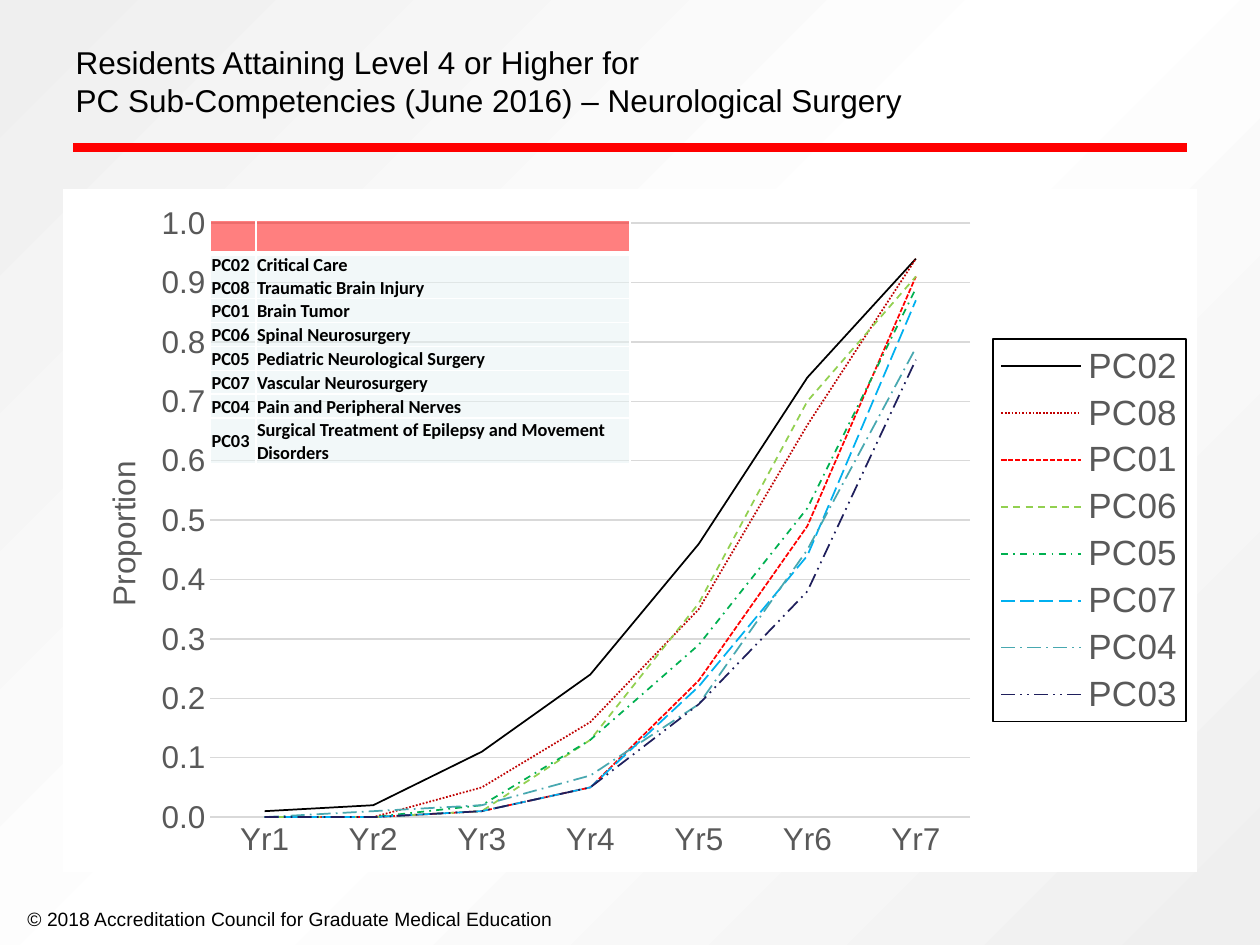
from copy import deepcopy
from lxml import etree
from pptx import Presentation
from pptx.chart.data import CategoryChartData
from pptx.dml.color import RGBColor
from pptx.enum.chart import XL_CHART_TYPE, XL_LEGEND_POSITION, XL_TICK_MARK
from pptx.enum.dml import MSO_LINE
from pptx.enum.shapes import MSO_CONNECTOR
from pptx.enum.text import MSO_ANCHOR, PP_ALIGN
from pptx.oxml import parse_xml
from pptx.oxml.ns import nsdecls, qn
from pptx.util import Inches, Pt

LINE = XL_CHART_TYPE.LINE
RIGHT = XL_LEGEND_POSITION.RIGHT
NONE = XL_TICK_MARK.NONE
MIDDLE = MSO_ANCHOR.MIDDLE
LEFT = PP_ALIGN.LEFT
STRAIGHT = MSO_CONNECTOR.STRAIGHT

BLACK = RGBColor(0x00, 0x00, 0x00)
WHITE = RGBColor(0xFF, 0xFF, 0xFF)
RED = RGBColor(0xFF, 0x00, 0x00)
GRAY = RGBColor(0x59, 0x59, 0x59)
GRID = RGBColor(0xD9, 0xD9, 0xD9)
EDGE = RGBColor(0xEF, 0xEF, 0xEF)
PALE = RGBColor(0xE7, 0xF3, 0xF4)
MAROON = RGBColor(0xC0, 0x00, 0x00)
LIME = RGBColor(0x92, 0xD0, 0x50)
GREEN = RGBColor(0x00, 0xB0, 0x50)
BLUE = RGBColor(0x00, 0xB0, 0xF0)
TEAL = RGBColor(0x48, 0xA8, 0xB0)
NAVY = RGBColor(0x1F, 0x1F, 0x5C)

SERIES = [
    ("PC02", BLACK, MSO_LINE.SOLID, (0.01, 0.02, 0.11, 0.24, 0.46, 0.74, 0.94)),
    ("PC08", MAROON, MSO_LINE.ROUND_DOT, (0, 0, 0.05, 0.16, 0.35, 0.66, 0.94)),
    ("PC01", RED, MSO_LINE.SQUARE_DOT, (0, 0, 0.01, 0.05, 0.23, 0.49, 0.91)),
    ("PC06", LIME, MSO_LINE.DASH, (0, 0, 0.01, 0.13, 0.36, 0.7, 0.91)),
    ("PC05", GREEN, MSO_LINE.DASH_DOT, (0, 0, 0.02, 0.13, 0.29, 0.52, 0.89)),
    ("PC07", BLUE, MSO_LINE.LONG_DASH, (0, 0, 0.01, 0.05, 0.22, 0.44, 0.87)),
    ("PC04", TEAL, MSO_LINE.LONG_DASH_DOT, (0, 0.01, 0.02, 0.07, 0.19, 0.45, 0.79)),
    ("PC03", NAVY, "lgDashDotDot", (0, 0, 0.01, 0.05, 0.19, 0.38, 0.77)),
]
ROWS = [
    (0.26, [], []),
    (0.36, ["PC02", "PC08"], ["Critical Care", "Traumatic Brain Injury"]),
    (0.19, ["PC01"], ["Brain Tumor"]),
    (0.19, ["PC06"], ["Spinal Neurosurgery"]),
    (0.19, ["PC05"], ["Pediatric Neurological Surgery"]),
    (0.19, ["PC07"], ["Vascular Neurosurgery"]),
    (0.19, ["PC04"], ["Pain and Peripheral Nerves"]),
    (0.36, ["PC03"], ["Surgical Treatment of Epilepsy and Movement Disorders"]),
]


def style(font, size, color, name="Arial"):
    font.size = Pt(size)
    font.name = name
    font.color.rgb = color


def place(node, index, **box):
    for old in node.findall(qn("c:layout")):
        node.remove(old)
    layout = etree.Element(qn("c:layout"))
    manual = etree.SubElement(layout, qn("c:manualLayout"))
    if index == 0:
        etree.SubElement(manual, qn("c:layoutTarget")).set("val", "inner")
    for key in "xy":
        etree.SubElement(manual, qn(f"c:{key}Mode")).set("val", "edge")
    for key, value in box.items():
        etree.SubElement(manual, qn(f"c:{key}")).set("val", str(value))
    node.insert(index, layout)


prs = Presentation()
prs.slide_width, prs.slide_height = Inches(10), Inches(7.5)
slide = prs.slides.add_slide(prs.slide_layouts[5])
shapes = slide.shapes

back = slide.background.fill
back.gradient()
back.gradient_angle = 315
first, last = back.gradient_stops
for stop, color in ((first, WHITE), (last, EDGE)):
    stop.color.rgb = color
stops = slide.background._cSld.find(".//" + qn("a:gsLst"))
stops.insert(1, deepcopy(stops[0]))
stops[1].set("pos", "50000")
first.color.rgb = EDGE

title = shapes.title
title.left, title.top = Inches(0.5), Inches(0.02)
title.width, title.height = Inches(9), Inches(1.25)
title.text_frame.vertical_anchor = MIDDLE
para = title.text_frame.paragraphs[0]
para.alignment = LEFT
for i, text in enumerate(("Residents Attaining Level 4 or Higher for",
                          "PC Sub-Competencies (June 2016) – Neurological Surgery")):
    if i:
        para.add_line_break()
    run = para.add_run()
    run.text = text
    style(run.font, 18, BLACK)

rule = shapes.add_connector(STRAIGHT, Inches(0.58), Inches(1.17), Inches(9.42), Inches(1.17))
rule.line.color.rgb = RED
rule.line.width = Pt(5)
etree.SubElement(rule._element.spPr, qn("a:effectLst"))

credit = shapes.add_textbox(Inches(0.12), Inches(7.15), Inches(4.4), Inches(0.29))
run = credit.text_frame.paragraphs[0].add_run()
run.text = "© 2018 Accreditation Council for Graduate Medical Education"
style(run.font, 11, BLACK)

data = CategoryChartData(number_format="0.00")
data.categories = [f"Yr{n}" for n in range(1, 8)]
for name, color, dash, values in SERIES:
    data.add_series(name, values)
chart = shapes.add_chart(LINE, Inches(0.5), Inches(1.5), Inches(9), Inches(5.42), data).chart
style(chart.font, 10, BLACK)
chart.has_title = False
chart._chartSpace.find(qn("c:txPr")).addprevious(parse_xml(
    f'<c:spPr {nsdecls("c", "a")}><a:solidFill><a:srgbClr val="{WHITE}"/></a:solidFill>'
    '<a:ln><a:noFill/></a:ln></c:spPr>'))
plot = chart.plots[0]
plot.vary_by_categories = False
for series, (name, color, dash, values) in zip(plot.series, SERIES):
    series.smooth = False
    line = series.format.line
    line.color.rgb = color
    line.width = Pt(1)
    if dash == "lgDashDotDot":
        ln = series._element.spPr.find(qn("a:ln"))
        etree.SubElement(ln, qn("a:prstDash")).set("val", dash)
    else:
        line.dash_style = dash

years, share = chart.category_axis, chart.value_axis
for axis in (years, share):
    axis.major_tick_mark = axis.minor_tick_mark = NONE
    style(axis.tick_labels.font, 18, GRAY)
share.minimum_scale, share.maximum_scale, share.major_unit = 0, 1, 0.1
share.tick_labels.number_format = "#,##0.0"
share.tick_labels.number_format_is_linked = False
share.format.line.fill.background()
for line in (years.format.line, share.major_gridlines.format.line):
    line.color.rgb = GRID
    line.width = Pt(0.75)
run = share.axis_title.text_frame.paragraphs[0].add_run()
run.text = "Proportion"
style(run.font, 18, GRAY)
run.font.bold = False

chart.has_legend = True
legend = chart.legend
legend.position = RIGHT
legend.include_in_layout = False
style(legend.font, 20, GRAY)
legend._element.find(qn("c:txPr")).addprevious(parse_xml(
    f'<c:spPr {nsdecls("c", "a")}><a:ln w="12700"><a:solidFill>'
    f'<a:srgbClr val="{BLACK}"/></a:solidFill></a:ln></c:spPr>'))
place(chart._chartSpace.chart.plotArea, 0, x=0.13, y=0.05, w=0.67, h=0.87)
place(share.axis_title._element, 1, x=0.03, y=0.39)
place(legend._element, 1, x=0.82, y=0.22, w=0.17, h=0.56)

table = shapes.add_table(len(ROWS), 2, Inches(1.67), Inches(1.75), Inches(3.33), Inches(1.92)).table
table.first_row = table.horz_banding = False
for col, width in zip(table.columns, (0.36, 2.97)):
    col.width = Inches(width)
for r, (height, *texts) in enumerate(ROWS):
    table.rows[r].height = Inches(height)
    for c, lines in enumerate(texts):
        cell = table.cell(r, c)
        cell.vertical_anchor = MIDDLE
        cell.margin_left = cell.margin_right = cell.margin_top = Inches(0.01)
        cell.margin_bottom = 0
        props = cell._tc.get_or_add_tcPr()
        for side in "LRTB":
            thick = 3 if (r, side) in ((0, "B"), (1, "T")) else 1
            props.append(parse_xml(
                f'<a:ln{side} {nsdecls("a")} w="{Pt(thick)}"><a:solidFill>'
                f'<a:srgbClr val="{WHITE}"/></a:solidFill></a:ln{side}>'))
        cell.fill.solid()
        cell.fill.fore_color.rgb = PALE if r else RED
        tint = props.find(qn("a:solidFill"))[0]
        etree.SubElement(tint, qn("a:alpha")).set("val", "50000")
        frame = cell.text_frame
        if not lines:
            etree.SubElement(frame.paragraphs[0]._p, qn("a:endParaRPr")).set("sz", "1050")
        for i, text in enumerate(lines):
            para = frame.add_paragraph() if i else frame.paragraphs[0]
            run = para.add_run()
            run.text = text
            style(run.font, 10.5, BLACK, "Calibri")
            run.font.bold = True

prs.save("out.pptx")
